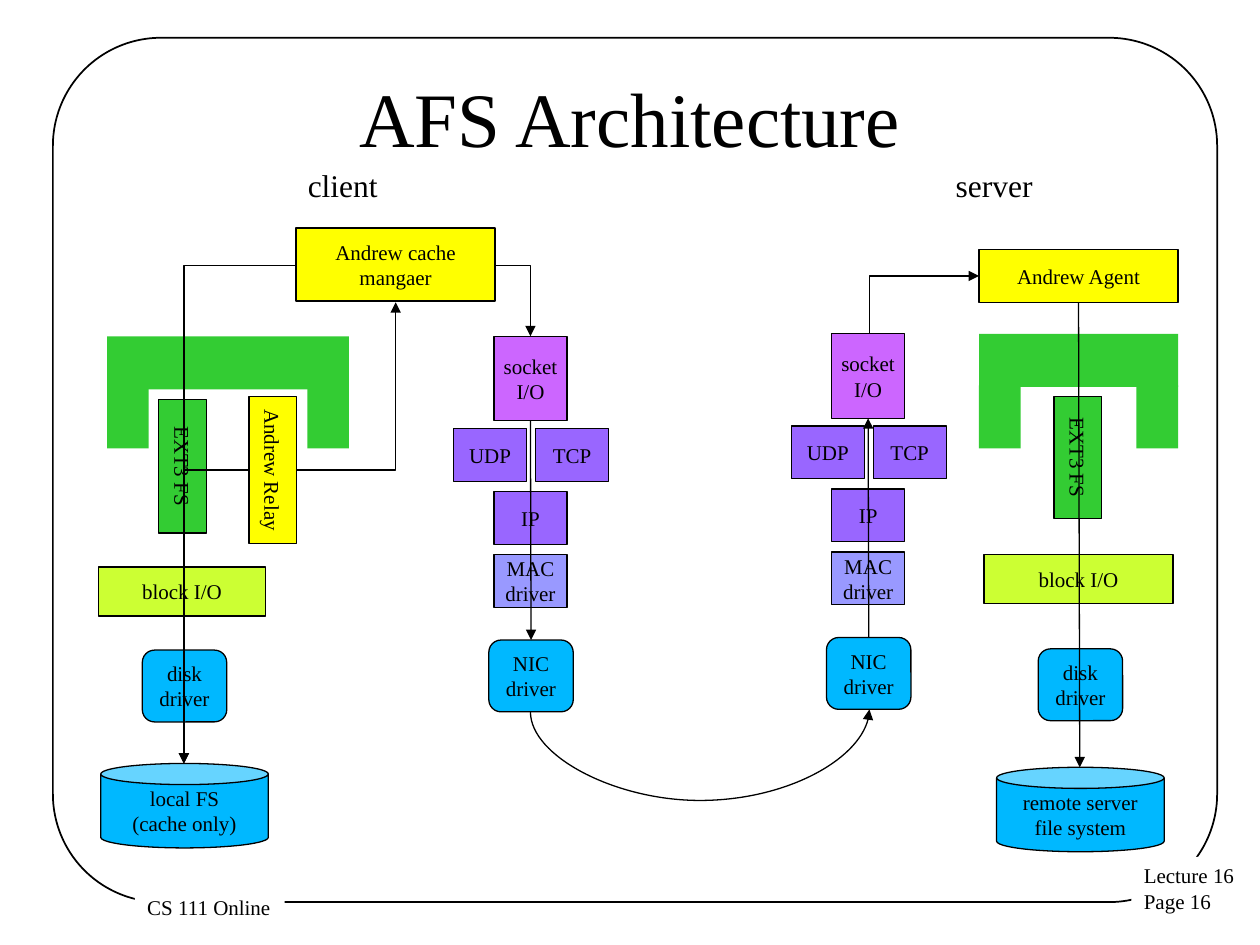
from dataclasses import dataclass

from lxml import etree
from pptx import Presentation
from pptx.dml.color import RGBColor
from pptx.enum.shapes import MSO_CONNECTOR, MSO_SHAPE
from pptx.enum.text import MSO_ANCHOR, PP_ALIGN
from pptx.oxml.ns import qn
from pptx.util import Pt

RECT, ROUND, CAN = MSO_SHAPE.RECTANGLE, MSO_SHAPE.ROUNDED_RECTANGLE, MSO_SHAPE.CAN
STRAIGHT, ELBOW, CURVE = MSO_CONNECTOR.STRAIGHT, MSO_CONNECTOR.ELBOW, MSO_CONNECTOR.CURVE
LEFT, CENTER = PP_ALIGN.LEFT, PP_ALIGN.CENTER
TOP, MIDDLE = MSO_ANCHOR.TOP, MSO_ANCHOR.MIDDLE
SITE_TOP, SITE_BOTTOM = 0, 2
EMU_PER_PX = 9144  # 100 px to the inch


@dataclass(frozen=True)
class Theme:
    font: str = "Times New Roman"
    title: int = 44
    heading: int = 18
    label: int = 12
    line: float = 0.75
    frame: float = 1
    ink: str = "000000"
    paper: str = "FFFFFF"
    andrew: str = "FFFF00"
    file_system: str = "33CC33"
    block: str = "CCFF33"
    device: str = "00B8FF"
    socket: str = "CC66FF"
    protocol: str = "9966FF"
    mac: str = "9999FF"


def px(n):
    return round(n * EMU_PER_PX)


def rgb(value):
    return RGBColor.from_string(value)


def write(tf, text, *, font, size, color, align=CENTER, anchor=MIDDLE, wrap=False):
    """Fill a text frame, one paragraph for each line of text."""
    tf.word_wrap = wrap
    tf.vertical_anchor = anchor
    for i, line in enumerate(text.split("\n")):
        p = tf.add_paragraph() if i else tf.paragraphs[0]
        p.alignment = align
        r = p.add_run()
        r.text = line
        r.font.name, r.font.size = font, Pt(size)
        r.font.color.rgb = rgb(color)


class Board:
    def __init__(self, slide, theme):
        self.s, self.theme = slide, theme

    def box(self, x, y, w, h, text="", fill=None, *, kind=RECT, line=None,
            adj=None, rotation=0, **fmt):
        t = self.theme
        sp = self.s.shapes.add_shape(kind, px(x), px(y), px(w), px(h))
        sp.shadow.inherit = False
        sp.rotation = rotation
        if adj is not None:
            sp.adjustments[0] = adj
        if fill:
            sp.fill.solid()
            sp.fill.fore_color.rgb = rgb(fill)
        else:
            sp.fill.background()
        if line:
            sp.line.color.rgb = rgb(t.ink)
            sp.line.width = Pt(line)
        else:
            sp.line.fill.background()
        if text:
            write(sp.text_frame, text, font=t.font, size=t.label, color=t.ink, **fmt)
        return sp

    def node(self, x, y, w, h, text, fill, **kw):
        """Outlined box with a centred label."""
        return self.box(x, y, w, h, text, fill, line=self.theme.line, **kw)

    def text(self, x, y, w, h, text, size, anchor=TOP):
        tb = self.s.shapes.add_textbox(px(x), px(y), px(w), px(h))
        write(tb.text_frame, text, font=self.theme.font, size=size,
              color=self.theme.ink, anchor=anchor, wrap=True)

    def arrow(self, x1, y1, x2, y2, kind=STRAIGHT, *, preset=None, adj=None,
              upright=False, start=None, end=None):
        """Arrow between two points; upright makes a bent one leave vertically."""
        if upright:
            cx, cy = (x1 + x2) / 2, (y1 + y2) / 2
            dx, dy = (y1 - y2) / 2, (x2 - x1) / 2
            x1, y1, x2, y2 = cx - dx, cy - dy, cx + dx, cy + dy
        c = self.s.shapes.add_connector(kind, px(x1), px(y1), px(x2), px(y2))
        c.line.color.rgb = rgb(self.theme.ink)
        c.line.width = Pt(self.theme.line)
        if start:
            c.begin_connect(*start)
        if end:
            c.end_connect(*end)
        pr = c._element.spPr
        etree.SubElement(c.line._get_or_add_ln(), qn("a:tailEnd"), type="triangle")
        etree.SubElement(pr, qn("a:effectLst"))
        geom = pr.find(qn("a:prstGeom"))
        if preset:
            geom.set("prst", preset)
        if adj is not None:
            guides = geom.find(qn("a:avLst"))
            if guides is None:
                guides = etree.SubElement(geom, qn("a:avLst"))
            etree.SubElement(guides, qn("a:gd"), name="adj1",
                             fmla=f"val {round(adj * 100000)}")
        if upright:
            pr.find(qn("a:xfrm")).set("rot", str(270 * 60000))

    def elbow(self, x1, y1, x2, y2, **kw):
        self.arrow(x1, y1, x2, y2, ELBOW, preset="bentConnector2", **kw)

    def canopy(self, x, y, w):
        """Bar on two legs that spans the file systems."""
        fill = self.theme.file_system
        self.box(x, y, w, 42, fill=fill)
        for left in (x, x + w - 33):
            self.box(left, 306, 33, 50, fill=fill)

    def network(self, x, y):
        """Protocol stack with its socket at x, y; returns socket and NIC."""
        t = self.theme
        socket = self.node(x, y, 58, 67, "socket\nI/O", t.socket)
        for dx, dy, label, fill in ((-32, 73, "UDP", t.protocol),
                                    (33, 73, "TCP", t.protocol),
                                    (0, 123, "IP", t.protocol),
                                    (0, 173, "MAC\ndriver", t.mac)):
            self.node(x + dx, y + dy, 58, 42, label, fill)
        nic = self.node(x - 4, y + 241, 67, 57, "NIC\ndriver", t.device,
                        kind=ROUND, adj=0.17)
        return socket, nic

    def storage(self, ext3, block, disk, store, label):
        """File system down to disk; each place is left, top, and width if it varies."""
        t = self.theme
        x, y, w = ext3
        self.node(x, y, w, 38, "EXT3 FS", t.file_system, rotation=90)
        x, y, w = block
        self.node(x, y, w, 39, "block I/O", t.block)
        self.node(*disk, 67, 57, "disk\ndriver", t.device, kind=ROUND, adj=0.17)
        self.node(*store, 133, 67, label, t.device, kind=CAN, adj=0.25)


def main():
    prs = Presentation()
    prs.slide_width, prs.slide_height = px(1000), px(750)
    t = Theme()
    b = Board(prs.slides.add_slide(prs.slide_layouts[6]), t)

    b.box(42, 30, 924, 686, kind=ROUND, adj=0.125, line=t.frame)
    b.box(898, 680, 93, 51, "Lecture 16\nPage 16", t.paper, align=LEFT, anchor=TOP)
    b.box(107, 705, 119, 30, "CS 111 Online", t.paper, align=LEFT, anchor=TOP)
    b.text(50, 30, 900, 125, "AFS Architecture", t.title, MIDDLE)
    for x, label in ((168, "client"), (685, "server")):
        b.text(x, 127, 208, 40, label, t.heading)

    b.canopy(85, 267, 192)
    b.canopy(777, 265, 158)
    b.storage((92, 351, 106), (78, 450, 133), (113, 516), (80, 606),
              "local FS\n(cache only)")
    b.storage((807, 344, 97), (781, 440, 150), (824, 515), (791, 609),
              "remote server\nfile system")
    b.node(158, 354, 117, 38, "Andrew Relay", t.andrew, rotation=90)
    b.node(235, 181, 158, 58, "Andrew cache\nmangaer", t.andrew)
    agent = b.node(777, 198, 158, 42, "Andrew Agent", t.andrew)

    client_socket, client_nic = b.network(392, 267)
    server_socket, server_nic = b.network(660, 265)
    b.arrow(421, 334, 421, 508, start=(client_socket, SITE_BOTTOM),
            end=(client_nic, SITE_TOP))
    b.arrow(690, 506, 690, 332, start=(server_nic, SITE_TOP),
            end=(server_socket, SITE_BOTTOM))
    b.arrow(421, 565, 690, 563, CURVE, preset="curvedConnector3", adj=-35, upright=True)

    b.elbow(394, 211, 421, 267)
    b.elbow(690, 265, 777, 219, upright=True)
    b.elbow(235, 373, 314, 240)
    b.elbow(235, 211, 146, 606)
    b.elbow(198, 373, 146, 606)
    b.arrow(856, 240, 857, 609, start=(agent, SITE_BOTTOM))

    prs.save("out.pptx")


if __name__ == "__main__":
    main()
